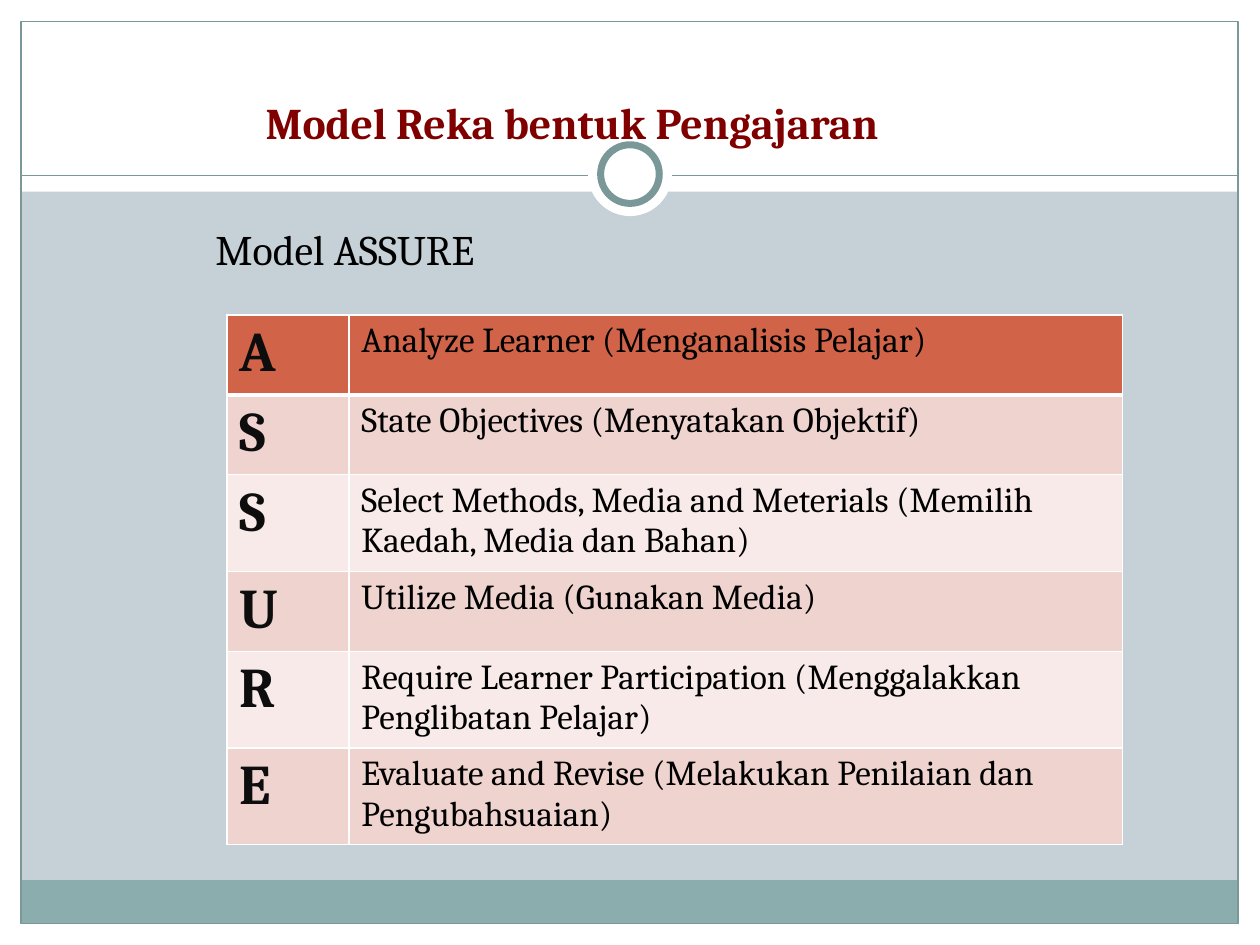
import pptx
import pptx.util
import pptx.dml.color
import pptx.enum.shapes
import pptx.enum.text
import pptx.oxml
import pptx.oxml.ns
import lxml.etree

Pt = pptx.util.Pt
RGBColor = pptx.dml.color.RGBColor
Shape = pptx.enum.shapes.MSO_SHAPE
qn = pptx.oxml.ns.qn

COLORS = {
    "background": "C5D1D7",
    "white": "FFFFFF",
    "band": "8CADAE",
    "frame": "7B9899",
    "title": "800000",
    "text": "000000",
    "letter": "0D0D0D",
    "header": "D16349",
    "dark_row": "EED3CF",
    "light_row": "F7EAE9",
}


def set_text(text_frame, text, size, color, bold=False):
    text_frame.word_wrap = True
    paragraph = text_frame.paragraphs[0]
    paragraph.text = text
    paragraph.font.name = "Cambria"
    paragraph.font.size = Pt(size)
    paragraph.font.bold = bold
    paragraph.font.color.rgb = RGBColor.from_string(COLORS[color])


presentation = pptx.Presentation()
presentation.slide_width = Pt(720)
presentation.slide_height = Pt(540)
slide = presentation.slides.add_slide(presentation.slide_layouts[6])
slide.background.fill.solid()
slide.background.fill.fore_color.rgb = RGBColor.from_string(COLORS["background"])

decorations = [
    (Shape.RECTANGLE, 0, 528, 720, 12, "white", 0),
    (Shape.RECTANGLE, 0, 0, 720, 109.5, "white", 0),
    (Shape.RECTANGLE, 0, 0, 12, 540, "white", 0),
    (Shape.RECTANGLE, 708, 0, 12, 540, "white", 0),
    (Shape.RECTANGLE, 11.75, 503, 695.5, 24.5, "band", 0),
    (Shape.RECTANGLE, 12, 12.25, 695.5, 515.5, None, 0.75),
    (None, 12, 100.5, 695.5, 0, None, 0.75),
    (Shape.OVAL, 336, 75.5, 48, 48, "white", 0),
    (Shape.OVAL, 343.25, 82.75, 33.5, 33.5, "white", 4),
]
for kind, left, top, width, height, fill, line_width in decorations:
    if kind is None:
        shape = slide.shapes.add_connector(
            pptx.enum.shapes.MSO_CONNECTOR.STRAIGHT,
            Pt(left), Pt(top), Pt(left + width), Pt(top + height))
        lxml.etree.SubElement(shape._element.spPr, qn("a:effectLst"))
    else:
        shape = slide.shapes.add_shape(kind, Pt(left), Pt(top), Pt(width), Pt(height))
        shape.shadow.inherit = False
        if fill:
            shape.fill.solid()
            shape.fill.fore_color.rgb = RGBColor.from_string(COLORS[fill])
        else:
            shape.fill.background()
    if line_width:
        shape.line.color.rgb = RGBColor.from_string(COLORS["frame"])
        shape.line.width = Pt(line_width)
    else:
        shape.line.fill.background()

title = slide.shapes.add_textbox(Pt(144.75), Pt(54.5), Pt(557), Pt(34))
title.text_frame.vertical_anchor = pptx.enum.text.MSO_ANCHOR.BOTTOM
set_text(title.text_frame, "Model Reka bentuk Pengajaran", 25, "title", True)

subtitle = slide.shapes.add_textbox(Pt(116), Pt(124), Pt(572), Pt(345))
set_text(subtitle.text_frame, "Model ASSURE", 24, "text")

steps = [
    ("A", "Analyze Learner (Menganalisis Pelajar)", 45.5),
    ("S", "State Objectives (Menyatakan Objektif)", 45.5),
    ("S", "Select Methods, Media and Meterials (Memilih Kaedah, Media dan Bahan)", 55.2),
    ("U", "Utilize Media (Gunakan Media)", 45.5),
    ("R", "Require Learner Participation (Menggalakkan Penglibatan Pelajar)", 55.2),
    ("E", "Evaluate and Revise (Melakukan Penilaian dan Pengubahsuaian)", 55.2),
]
column_widths = [69.75, 442.25]
table = slide.shapes.add_table(
    len(steps), 2, Pt(129.6), Pt(180), Pt(sum(column_widths)),
    Pt(sum(step[2] for step in steps))).table
for column, width in zip(table.columns, column_widths):
    column.width = Pt(width)

for row_index, (letter, description, height) in enumerate(steps):
    table.rows[row_index].height = Pt(height)
    if row_index == 0:
        fill = "header"
    else:
        fill = "dark_row" if row_index % 2 else "light_row"
    set_text(table.cell(row_index, 0).text_frame, letter, 32, "letter", True)
    set_text(table.cell(row_index, 1).text_frame, description, 20, "text")
    for cell in table.rows[row_index].cells:
        cell.fill.solid()
        cell.fill.fore_color.rgb = RGBColor.from_string(COLORS[fill])
        properties = cell._tc.get_or_add_tcPr()
        for position, side in enumerate(["L", "R", "T", "B"]):
            thick = (row_index, side) in [(0, "B"), (1, "T")]
            border = lxml.etree.Element(qn("a:ln" + side), w=str(Pt(3 if thick else 1)))
            border_fill = lxml.etree.SubElement(border, qn("a:solidFill"))
            lxml.etree.SubElement(border_fill, qn("a:srgbClr"), val=COLORS["white"])
            properties.insert(position, border)

presentation.save("out.pptx")
